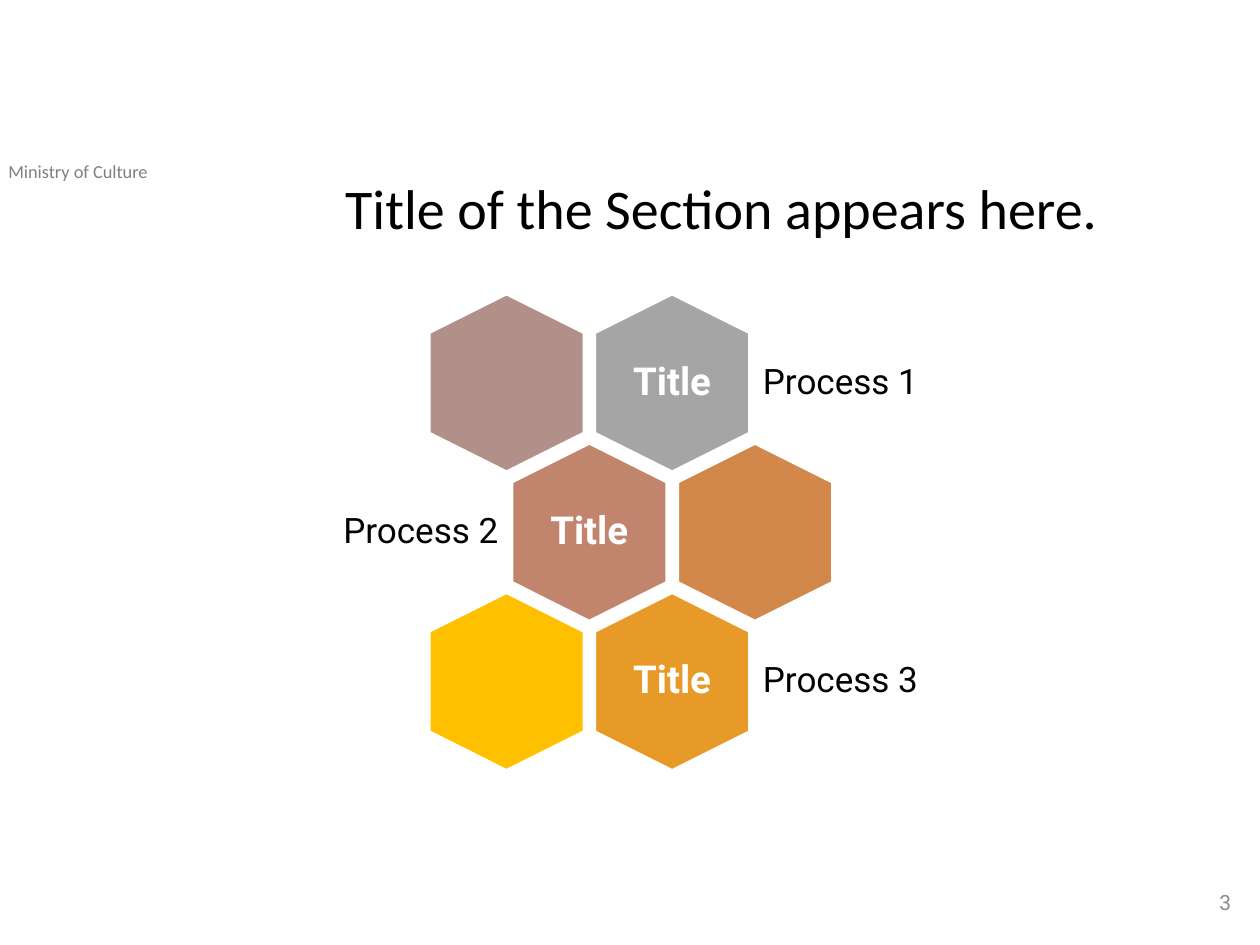
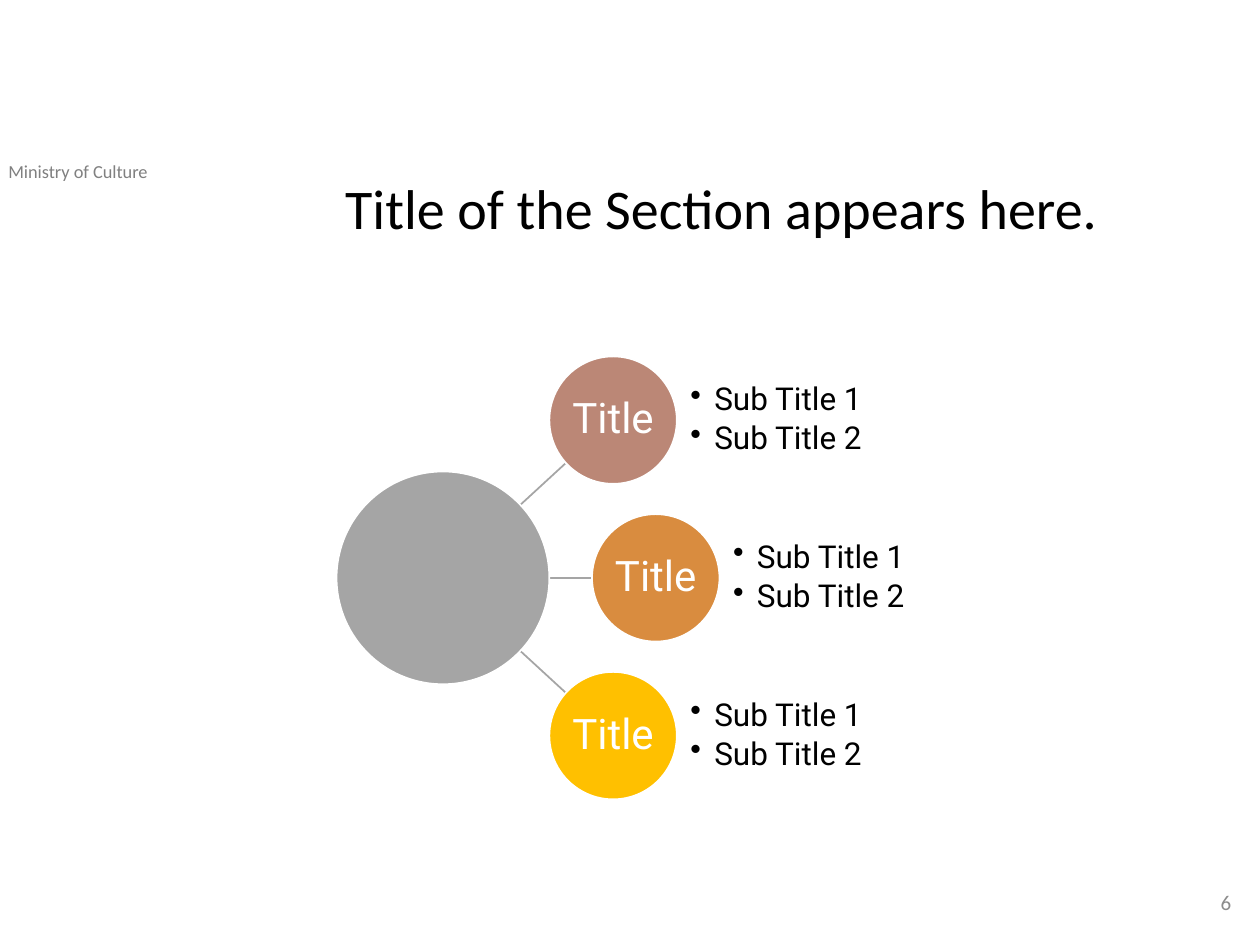
from lxml import etree
from pptx import Presentation
from pptx.dml.color import RGBColor
from pptx.enum.shapes import MSO_CONNECTOR, MSO_SHAPE
from pptx.enum.text import MSO_ANCHOR, PP_ALIGN
from pptx.oxml.ns import qn
from pptx.util import Cm, Pt

WHITE = RGBColor(0xFF, 0xFF, 0xFF)
BLACK = RGBColor(0x00, 0x00, 0x00)
GREY = RGBColor(0xA5, 0xA5, 0xA5)
MINISTRY_GREY = RGBColor(0x80, 0x80, 0x80)
NUMBER_GREY = RGBColor(0x8C, 0x8C, 0x8C)
MAUVE = RGBColor(0xB1, 0x90, 0x8A)
CLAY = RGBColor(0xC0, 0x85, 0x6C)
COPPER = RGBColor(0xD2, 0x88, 0x4B)
ORANGE = RGBColor(0xE7, 0x9A, 0x27)
ROSE = RGBColor(0xBB, 0x87, 0x76)
AMBER = RGBColor(0xD9, 0x8C, 0x3F)
GOLD = RGBColor(0xFF, 0xC0, 0x00)

HEADING_FONT = "Calibri"
DIAGRAM_FONT = "Roboto"


class Deck:
    """Holds the shared style and draws on the current slide; lengths are in cm."""

    def __init__(self):
        self.presentation = Presentation()
        self.presentation.slide_width = Cm(25.4)
        self.presentation.slide_height = Cm(19.05)
        self.slide = None

    def add_slide(self, title, number, number_font):
        self.slide = self.presentation.slides.add_slide(self.presentation.slide_layouts[6])
        self.text("Ministry of Culture", -0.08, 3.1, 5.54, 0.71, 10.5,
                  font=HEADING_FONT, color=MINISTRY_GREY)
        self.text(title, 6.71, 3.53, 16.61, 2.01, 32, font=HEADING_FONT, spacing=0.9)
        self.text(number, 19.35, 17.68, 5.72, 1.02, 12, font=number_font,
                  color=NUMBER_GREY, align=PP_ALIGN.RIGHT, anchor=MSO_ANCHOR.MIDDLE)

    def set_text(self, shape, text, size, font=DIAGRAM_FONT, color=BLACK, align=PP_ALIGN.LEFT,
                 anchor=MSO_ANCHOR.TOP, spacing=1.0, bold=False, inset=None, bullets=False):
        frame = shape.text_frame
        frame.text = text
        frame.word_wrap = True
        frame.vertical_anchor = anchor
        if inset is not None:
            frame.margin_left = frame.margin_right = Cm(inset)
            frame.margin_top = frame.margin_bottom = Cm(inset)
        for index, paragraph in enumerate(frame.paragraphs):
            if bullets:
                self.bullet(paragraph)
            if index:
                paragraph.space_before = Pt(3)
            paragraph.alignment = align
            paragraph.line_spacing = spacing
            for run in paragraph.runs:
                run.font.name = font
                run.font.size = Pt(size)
                run.font.bold = bold
                run.font.color.rgb = color

    def bullet(self, paragraph):
        properties = paragraph._p.get_or_add_pPr()
        properties.set("marL", str(Cm(0.48)))
        properties.set("indent", str(-Cm(0.48)))
        etree.SubElement(properties, qn("a:buChar")).set("char", "•")

    def text(self, text, left, top, width, height, size, **style):
        box = self.slide.shapes.add_textbox(Cm(left), Cm(top), Cm(width), Cm(height))
        self.set_text(box, text, size, **style)

    def centred_shape(self, kind, x, y, width, height, color):
        shape = self.slide.shapes.add_shape(
            kind, Cm(x - width / 2), Cm(y - height / 2), Cm(width), Cm(height))
        shape.shadow.inherit = False
        shape.fill.solid()
        shape.fill.fore_color.rgb = color
        shape.line.color.rgb = WHITE
        shape.line.width = Pt(1)
        return shape

    def hexagon(self, x, y, color, title):
        cell = self.centred_shape(MSO_SHAPE.HEXAGON, x, y, 3.56, 3.1, color)
        cell.rotation = 90
        if title:
            self.text(title, x - 1.07, y - 1.22, 2.14, 2.44, 22, color=WHITE, bold=True,
                      align=PP_ALIGN.CENTER, anchor=MSO_ANCHOR.MIDDLE, spacing=0.9, inset=0.23)

    def circle(self, x, y, diameter, color, title=""):
        disc = self.centred_shape(MSO_SHAPE.OVAL, x, y, diameter, diameter, color)
        if title:
            self.set_text(disc, title, 24, color=WHITE, align=PP_ALIGN.CENTER,
                          anchor=MSO_ANCHOR.MIDDLE, spacing=0.9, inset=0.05)

    def line(self, x1, y1, x2, y2):
        spoke = self.slide.shapes.add_connector(
            MSO_CONNECTOR.STRAIGHT, Cm(x1), Cm(y1), Cm(x2), Cm(y2))
        spoke.line.color.rgb = GREY
        spoke.line.width = Pt(1)
        etree.SubElement(spoke._element.spPr, qn("a:effectLst"))


def add_honeycomb(deck):
    column_pitch, row_pitch = 3.34, 3.01
    label_width, label_height, label_offset = 3.9, 2.13, 1.63
    # Each row: left colour, right colour, column of the titled cell, label
    rows = [
        (MAUVE, GREY, 1, "Process 1"),
        (CLAY, COPPER, 0, "Process 2"),
        (GOLD, ORANGE, 1, "Process 3"),
    ]
    for row, (*colors, titled, process) in enumerate(rows):
        first_x = 10.21 + row % 2 * column_pitch / 2
        y = 7.72 + row * row_pitch
        for column, color in enumerate(colors):
            deck.hexagon(first_x + column * column_pitch, y, color,
                         "Title" if column == titled else "")
        if titled:
            label_left, align = first_x + column_pitch + label_offset, PP_ALIGN.LEFT
        else:
            label_left, align = first_x - label_offset - label_width, PP_ALIGN.RIGHT
        deck.text(process, label_left, y - label_height / 2, label_width, label_height, 20,
                  align=align, anchor=MSO_ANCHOR.MIDDLE, spacing=0.9, inset=0.2)


def add_radial_cluster(deck):
    hub_x, hub_y, pitch = 8.93, 11.65, 3.18
    diameter = 2.57
    for x_end, dy_start, dy_end in [(11.4, 1.4, 2.31), (11.94, 0, 0), (11.4, -1.4, -2.31)]:
        deck.line(10.41, hub_y + dy_start, x_end, hub_y + dy_end)
    deck.circle(hub_x, hub_y, 4.29, GREY)
    for step, x, color in [(-1, 12.36, ROSE), (0, 13.22, AMBER), (1, 12.36, GOLD)]:
        y = hub_y + step * pitch
        deck.circle(x, y, diameter, color, "Title")
        deck.text("Sub Title 1\nSub Title 2", x + 1.56, y - diameter / 2, 3.86, diameter, 18,
                  anchor=MSO_ANCHOR.MIDDLE, spacing=0.9, inset=0, bullets=True)


def main():
    deck = Deck()
    section_title = "Title of the Section appears here."
    deck.add_slide(section_title, "3", DIAGRAM_FONT)
    add_honeycomb(deck)
    deck.add_slide(section_title, "6", HEADING_FONT)
    add_radial_cluster(deck)
    deck.presentation.save("out.pptx")


if __name__ == "__main__":
    main()
